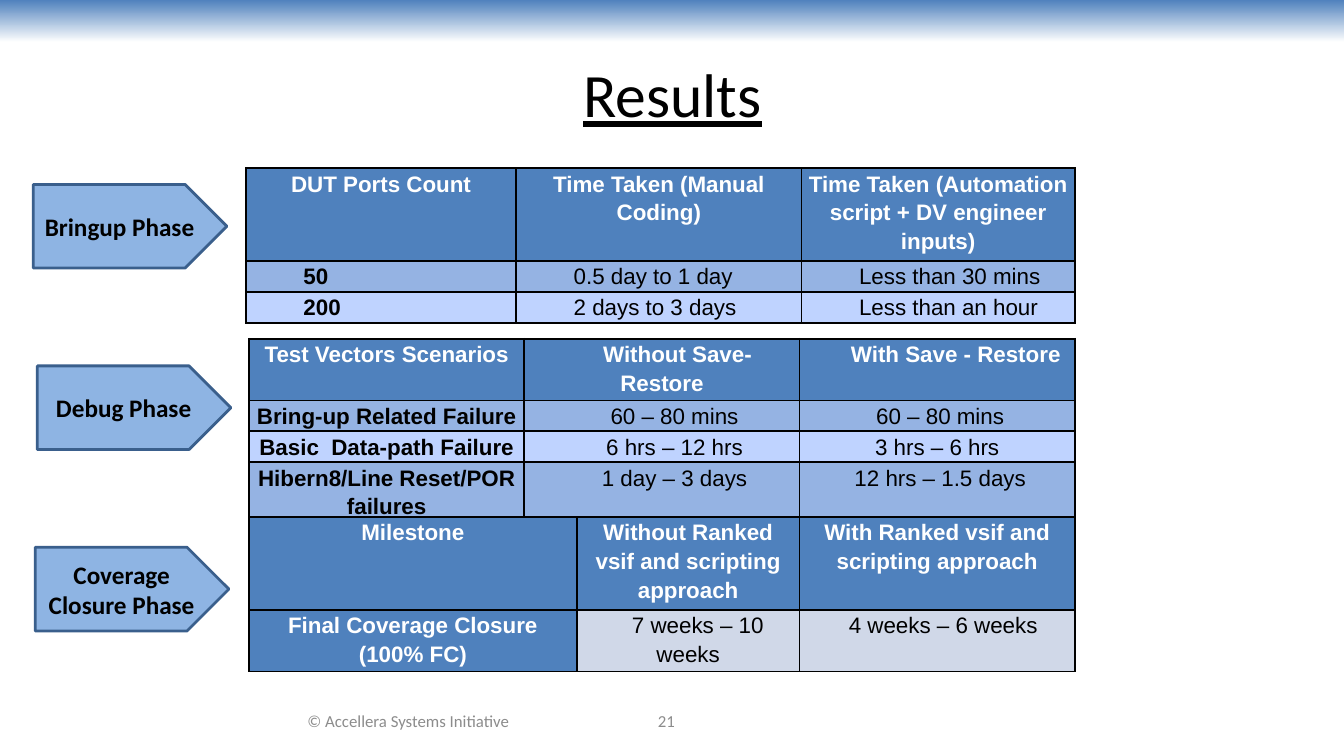
from dataclasses import dataclass

import pptx
import pptx.dml.color
import pptx.enum.shapes
import pptx.enum.text
import pptx.oxml
import pptx.oxml.ns
import pptx.util

Inches = pptx.util.Inches
Pt = pptx.util.Pt
Align = pptx.enum.text.PP_ALIGN
Shape = pptx.enum.shapes.MSO_SHAPE


@dataclass(frozen=True)
class Theme:
    blue: str = "4F81BD"
    band: str = "95B3E3"
    pale: str = "BFD3FF"
    mist: str = "D0D8E8"
    tag: str = "8EB4E3"
    edge: str = "3A5F8C"
    gray: str = "8C8C8C"
    black: str = "000000"
    white: str = "FFFFFF"
    head: str = "Calibri"
    body: str = "Arial"
    title: int = 44
    label: int = 18
    cell: int = 16
    foot: int = 12


theme = Theme()


def rgb(code):
    return pptx.dml.color.RGBColor.from_string(code)


def write(frame, text, size, color=theme.black, face=theme.head, bold=False,
          under=False, align=Align.CENTER, space=None, left=0, first=0):
    """Fill a text frame with one formatted paragraph."""
    frame.word_wrap = True
    para = frame.paragraphs[0]
    para.alignment = align
    if space:
        para.line_spacing = space
    props = para._p.get_or_add_pPr()
    props.set("marL", str(Inches(left)))
    props.set("indent", str(Inches(first)))
    run = para.add_run()
    run.text = text
    font = run.font
    font.name, font.size = face, Pt(size)
    font.bold, font.underline = bold, under
    font.color.rgb = rgb(color)


def add_text(slide, box, text, size, **style):
    frame = slide.shapes.add_textbox(*map(Inches, box)).text_frame
    frame.vertical_anchor = pptx.enum.text.MSO_ANCHOR.MIDDLE
    write(frame, text, size, **style)


def add_band(slide, box):
    band = slide.shapes.add_shape(Shape.RECTANGLE, *map(Inches, box))
    band.shadow.inherit = False
    band.line.fill.background()
    band.fill.gradient()
    band.fill.gradient_angle = 270
    for stop, color in zip(band.fill.gradient_stops, (theme.blue, theme.white)):
        stop.color.rgb = rgb(color)


def add_tag(slide, box, text):
    tag = slide.shapes.add_shape(Shape.PENTAGON, *map(Inches, box))
    tag.shadow.inherit = False
    tag.fill.solid()
    tag.fill.fore_color.rgb = rgb(theme.tag)
    tag.line.color.rgb = rgb(theme.edge)
    tag.line.width = Pt(2)
    tag.text_frame.vertical_anchor = pptx.enum.text.MSO_ANCHOR.MIDDLE
    write(tag.text_frame, text, theme.label, bold=True)


def add_edges(cell):
    props = cell._tc.get_or_add_tcPr()
    for side in ("lnL", "lnR", "lnT", "lnB"):
        props.append(pptx.oxml.parse_xml(
            f'<a:{side} {pptx.oxml.ns.nsdecls("a")} w="{Pt(1.5)}"><a:solidFill>'
            f'<a:srgbClr val="{theme.black}"/></a:solidFill></a:{side}>'))


def add_grid(slide, spot, cols, lines, rows, fills, side=False, inset=None):
    """Place a table; lines holds the text lines of each row.

    A cell is a text, or a text with its first-line indent.
    """
    tops = [0.29 * count for count in lines]
    box = (*spot, sum(cols), sum(tops))
    table = slide.shapes.add_table(len(rows), len(cols), *map(Inches, box)).table
    for col, width in zip(table.columns, cols):
        col.width = Inches(width)
    for r, (row, height) in enumerate(zip(rows, tops)):
        table.rows[r].height = Inches(height)
        for c, item in enumerate(row):
            text, first = item if isinstance(item, tuple) else (item, 0)
            cell = table.cell(r, c)
            cell.margin_left = cell.margin_right = Inches(0.07)
            cell.margin_top = cell.margin_bottom = 0
            add_edges(cell)
            head = r == 0 or (side and c == 0)
            cell.fill.solid()
            cell.fill.fore_color.rgb = rgb(
                theme.blue if head else fills[(r - 1) % len(fills)])
            shift = inset if inset and not head else 0
            write(cell.text_frame, text, theme.cell, face=theme.body,
                  color=theme.white if head else theme.black,
                  bold=head or c == 0, space=1.15, left=shift, first=first,
                  align=Align.LEFT if shift else Align.CENTER)


def add_phases(slide, box):
    """Three tags down the left side."""
    left, top, width, height = box
    tags = (("Bringup Phase", 0), ("Debug Phase", 0.04),
            ("Coverage Closure Phase", 0.02))
    for n, (text, shift) in enumerate(tags):
        add_tag(slide, (left + shift, top + 1.8 * n, width, height), text)


def add_tables(slide, left, top):
    bands = (theme.band, theme.pale)
    add_grid(slide, (left, top), (2.68, 2.83, 2.71), (3, 1, 1), (
        ("DUT Ports Count", "Time Taken (Manual Coding)",
         "Time Taken (Automation script + DV engineer inputs)"),
        ("50", "0.5 day to 1 day", "Less than 30 mins"),
        ("200", "2 days to 3 days", "Less than an hour"),
    ), bands, inset=0.5)
    add_grid(slide, (left + 0.03, top + 1.69), (2.73,) * 3, (2, 1, 1, 2), (
        ("Test Vectors Scenarios", ("Without Save-Restore", 0.31),
         ("With Save - Restore", 0.37)),
        ("Bring-up Related Failure", ("60 – 80 mins", 0.25),
         ("60 – 80 mins", 0.06)),
        ("Basic  Data-path Failure", ("6 hrs – 12 hrs", 0.25), "3 hrs – 6 hrs"),
        ("Hibern8/Line Reset/POR failures", ("1 day – 3 days", 0.25),
         ("12 hrs – 1.5 days", 0.06)),
    ), bands)
    add_grid(slide, (left + 0.03, top + 3.46), (3.25, 2.21, 2.73), (3, 2), (
        ("Milestone", "Without Ranked vsif and scripting approach",
         "With Ranked vsif and scripting approach"),
        ("Final Coverage Closure (100% FC)", ("7 weeks – 10 weeks", 0.19),
         ("4 weeks – 6 weeks", 0.12)),
    ), (theme.mist,), side=True)


def add_foot(slide, top, height):
    for text, left, width in (("© Accellera Systems Initiative", 2.44, 3.22),
                              ("21", 5.33, 2.56)):
        add_text(slide, (left, top, width, height), text, theme.foot,
                 color=theme.gray)


def main():
    deck = pptx.Presentation()
    deck.slide_width, deck.slide_height = Inches(13.33), Inches(7.5)
    slide = deck.slides.add_slide(deck.slide_layouts[6])
    add_band(slide, (0, 0, 13.33, 0.42))
    add_text(slide, (0.67, 0.3, 12, 1.25), "Results", theme.title, under=True)
    add_tables(slide, 2.44, 1.67)
    add_phases(slide, (0.33, 1.83, 1.92, 0.83))
    add_foot(slide, 6.95, 0.4)
    deck.save("out.pptx")


if __name__ == "__main__":
    main()
